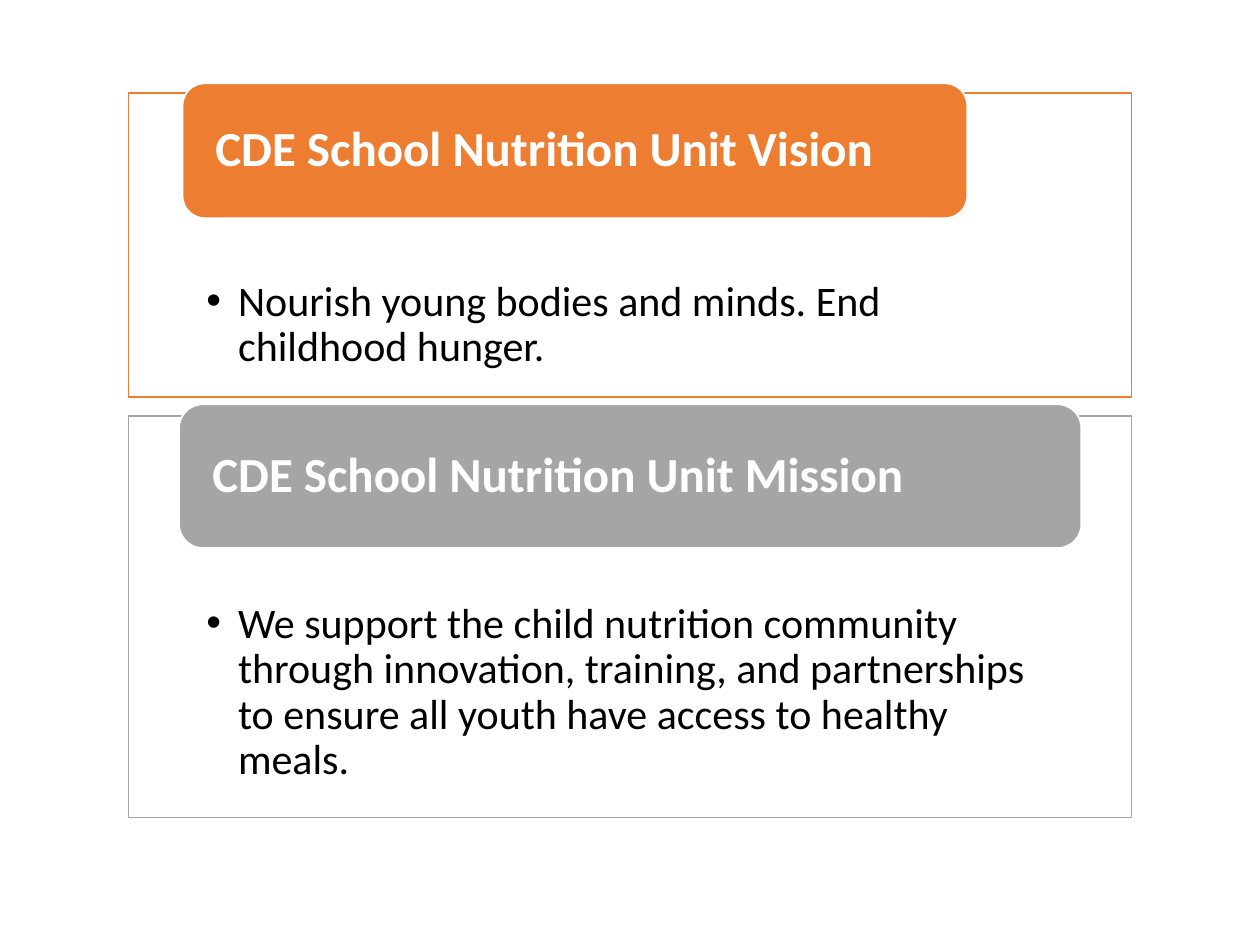
"""Build a slide with the vision and mission of a school nutrition unit."""
from lxml import etree
from pptx import Presentation
from pptx import util as u
from pptx.dml.color import RGBColor
from pptx.enum import shapes, text
from pptx.oxml.ns import qn

COLORS = {"vision": "ED7D31", "mission": "A5A5A5", "white": "FFFFFF", "black": "000000"}
FONT = "Calibri"
PANEL_LEFT, PANEL_WIDTH = 2.59, 20.22
PANEL_INSETS = (1.57, 3.76, 1.57, 0.48)
HEADING_INSETS = (0.53, 0, 0.53, 0)
BULLET_INDENT = 0.64

SECTIONS = [
    {
        "color": "vision",
        "heading": "CDE School Nutrition Unit Vision",
        "body": "Nourish young bodies and minds. End childhood hunger.",
        "panel": (1.88, 6.12),
        "tab": (3.68, 1.68, 15.82, 2.72),
    },
    {
        "color": "mission",
        "heading": "CDE School Nutrition Unit Mission",
        "body": "We support the child nutrition community through innovation, training, "
                "and partnerships to ensure all youth have access to healthy meals.",
        "panel": (8.38, 8.1),
        "tab": (3.61, 8.15, 18.19, 2.9),
    },
]


def rgb(name):
    return RGBColor.from_string(COLORS[name])


def add_box(s, kind, box, fill, line):
    sp = s.shapes.add_shape(kind, *(u.Cm(v) for v in box))
    sp.shadow.inherit = False
    sp.fill.solid()
    sp.fill.fore_color.rgb = rgb(fill)
    sp.line.color.rgb = rgb(line)
    sp.line.width = u.Pt(1)
    return sp


def write(sp, content, size, color, bold, anchor, insets):
    tf = sp.text_frame
    tf.word_wrap = True
    tf.vertical_anchor = anchor
    tf.margin_left, tf.margin_top, tf.margin_right, tf.margin_bottom = (u.Cm(v) for v in insets)
    p = tf.paragraphs[0]
    p.alignment = text.PP_ALIGN.LEFT
    p.line_spacing = 0.9
    r = p.add_run()
    r.text = content
    r.font.name, r.font.size, r.font.bold = FONT, u.Pt(size), bold
    r.font.color.rgb = rgb(color)
    return p


def add_bullet(p):
    p.level = 1
    pPr = p._p.get_or_add_pPr()
    pPr.set("marL", str(u.Cm(BULLET_INDENT)))
    pPr.set("indent", str(-u.Cm(BULLET_INDENT)))
    etree.SubElement(pPr, qn("a:buFont")).set("typeface", "Arial")
    etree.SubElement(pPr, qn("a:buChar")).set("char", "•")


def add_section(s, section):
    top, height = section["panel"]
    panel = add_box(s, shapes.MSO_SHAPE.RECTANGLE, (PANEL_LEFT, top, PANEL_WIDTH, height),
                    "white", section["color"])
    fill = panel._element.spPr.find(qn("a:solidFill"))
    etree.SubElement(fill[0], qn("a:alpha")).set("val", "90000")
    add_bullet(write(panel, section["body"], 24, "black", False,
                     text.MSO_ANCHOR.TOP, PANEL_INSETS))
    tab = add_box(s, shapes.MSO_SHAPE.ROUNDED_RECTANGLE, section["tab"],
                  section["color"], "white")
    write(tab, section["heading"], 28, "white", True, text.MSO_ANCHOR.MIDDLE, HEADING_INSETS)


def main():
    prs = Presentation()
    prs.slide_width, prs.slide_height = u.Cm(25.4), u.Cm(19.05)
    s = prs.slides.add_slide(prs.slide_layouts[6])
    for section in SECTIONS:
        add_section(s, section)
    prs.save("out.pptx")


if __name__ == "__main__":
    main()
